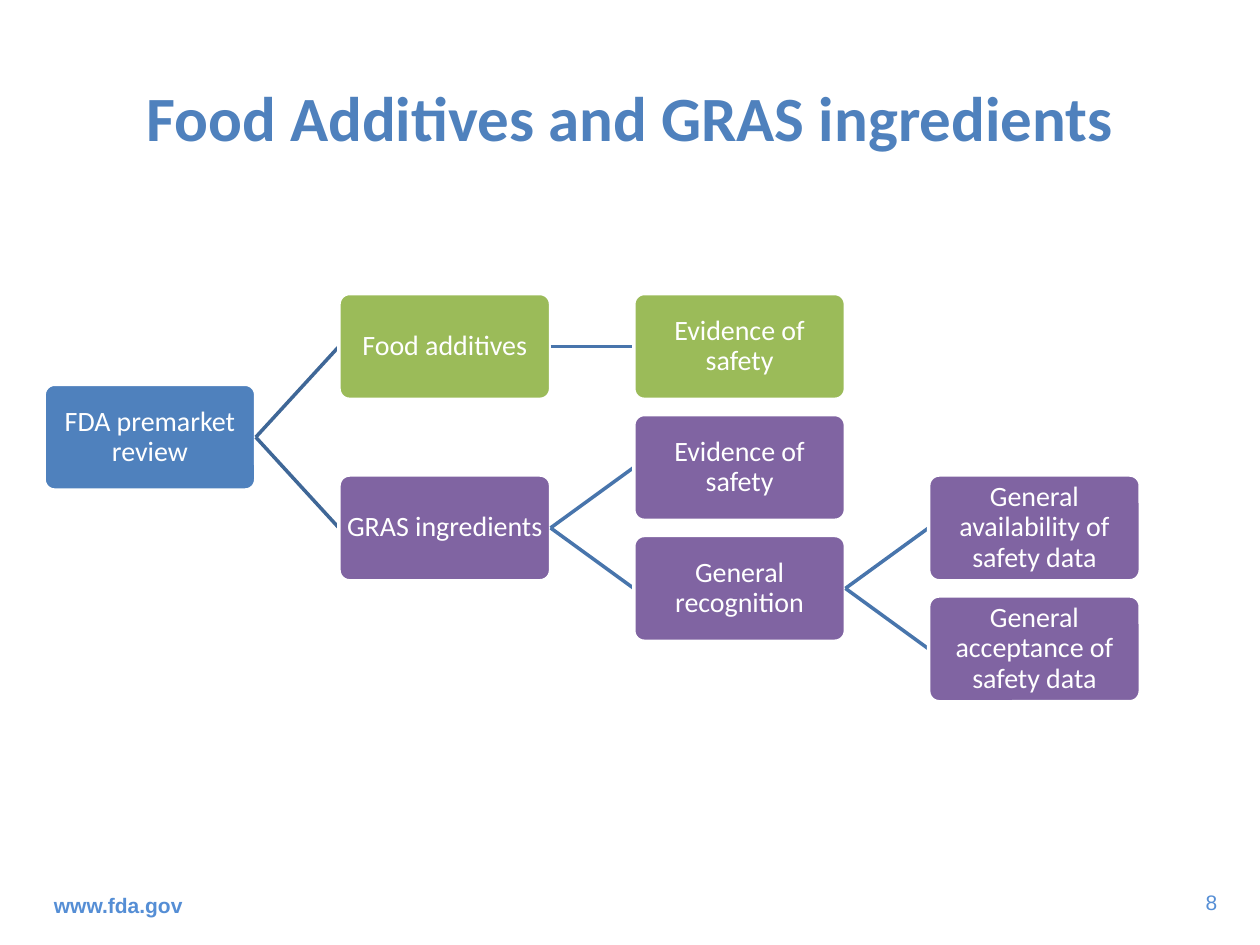
from dataclasses import dataclass

from lxml import etree
from pptx import Presentation
from pptx.dml.color import RGBColor
from pptx.enum.shapes import MSO_CONNECTOR, MSO_SHAPE
from pptx.enum.text import MSO_ANCHOR, PP_ALIGN
from pptx.oxml.ns import qn
from pptx.util import Inches, Pt

ROUNDED = MSO_SHAPE.ROUNDED_RECTANGLE
STRAIGHT = MSO_CONNECTOR.STRAIGHT
MIDDLE = MSO_ANCHOR.MIDDLE
TOP = MSO_ANCHOR.TOP
LEFT, CENTER, RIGHT = PP_ALIGN.LEFT, PP_ALIGN.CENTER, PP_ALIGN.RIGHT
LEFT_SIDE, RIGHT_SIDE = 1, 3


@dataclass(frozen=True)
class Theme:
    blue: str = "4F81BD"
    green: str = "9BBB59"
    purple: str = "8064A2"
    white: str = "FFFFFF"
    footer: str = "558ED5"
    first_link: str = "3F6797"
    later_link: str = "4875AC"
    heading_font: str = "Calibri"
    footer_font: str = "Arial"
    title_size: int = 36
    node_size: int = 16
    footer_size: int = 12
    line_width: int = 2


THEME = Theme()

# Tree grid, in inches; rows are counted in whole leaf steps
TREE_LEFT, TREE_TOP = 0.35, 2.33
COLUMN_STEP, ROW_STEP = 2.34, 0.96
NODE_WIDTH, NODE_HEIGHT = 1.68, 0.84

# Each node: label, fill, row, children
TREE = ("FDA premarket review", THEME.blue, 0.75, [
    ("Food additives", THEME.green, 0, [
        ("Evidence of safety", THEME.green, 0, []),
    ]),
    ("GRAS ingredients", THEME.purple, 1.5, [
        ("Evidence of safety", THEME.purple, 1, []),
        ("General recognition", THEME.purple, 2, [
            ("General availability of safety data", THEME.purple, 1.5, []),
            ("General acceptance of safety data", THEME.purple, 2.5, []),
        ]),
    ]),
])


def color(value):
    return RGBColor.from_string(value)


def write(frame, text, *, size, ink, font=THEME.heading_font, bold=False,
          align=CENTER, anchor=MIDDLE, wrap=True, spacing=None, inset=None):
    frame.word_wrap = wrap
    frame.vertical_anchor = anchor
    if inset is not None:
        frame.margin_left = frame.margin_right = Inches(inset)
        frame.margin_top = frame.margin_bottom = Inches(inset)
    frame.text = text
    paragraph = frame.paragraphs[0]
    paragraph.alignment = align
    if spacing is not None:
        paragraph.line_spacing = spacing
    paragraph.font.name = font
    paragraph.font.size = Pt(size)
    paragraph.font.bold = bold
    paragraph.font.color.rgb = color(ink)


def add_title(slide, text):
    title = slide.shapes.title
    title.left, title.top = Inches(0.5), Inches(0.3)
    title.width, title.height = Inches(9), Inches(1.25)
    write(title.text_frame, text, size=THEME.title_size, ink=THEME.blue,
          bold=True)


def add_footer(slide, text, left, top, width, height, **text_format):
    box = slide.shapes.add_textbox(Inches(left), Inches(top),
                                   Inches(width), Inches(height))
    write(box.text_frame, text, size=THEME.footer_size, ink=THEME.footer,
          font=THEME.footer_font, **text_format)


def add_node(slide, label, fill, column, row):
    node = slide.shapes.add_shape(
        ROUNDED, Inches(TREE_LEFT + column * COLUMN_STEP),
        Inches(TREE_TOP + row * ROW_STEP),
        Inches(NODE_WIDTH), Inches(NODE_HEIGHT))
    node.adjustments[0] = 0.1
    node.shadow.inherit = False
    node.fill.solid()
    node.fill.fore_color.rgb = color(fill)
    node.line.color.rgb = color(THEME.white)
    node.line.width = Pt(THEME.line_width)
    write(node.text_frame, label, size=THEME.node_size, ink=THEME.white,
          spacing=0.9, inset=0.01)
    return node


def add_link(slide, parent, ink):
    link = slide.shapes.add_connector(STRAIGHT, 0, 0, 0, 0)
    link.begin_connect(parent, RIGHT_SIDE)
    link.line.color.rgb = color(ink)
    link.line.width = Pt(THEME.line_width)
    etree.SubElement(link._element.spPr, qn("a:effectLst"))
    return link


def add_branch(slide, branch, column=0, parent=None):
    label, fill, row, children = branch
    # The link goes in first so that the child's white outline covers its end
    link = None
    if parent is not None:
        ink = THEME.first_link if column == 1 else THEME.later_link
        link = add_link(slide, parent, ink)
    node = add_node(slide, label, fill, column, row)
    if link is not None:
        link.end_connect(node, LEFT_SIDE)
    for child in children:
        add_branch(slide, child, column + 1, node)


def main():
    deck = Presentation()
    deck.slide_width, deck.slide_height = Inches(10), Inches(7.5)
    slide = deck.slides.add_slide(deck.slide_layouts[5])

    # Heading
    add_title(slide, "Food Additives and GRAS ingredients")

    # Footer: page number and web address
    add_footer(slide, "8", 9.35, 7.01, 0.41, 0.3, align=RIGHT, anchor=TOP,
               wrap=False)
    add_footer(slide, "www.fda.gov", 0.33, 6.98, 3.17, 0.4, align=LEFT,
               bold=True)

    # Review tree
    add_branch(slide, TREE)

    deck.save("out.pptx")


if __name__ == "__main__":
    main()
